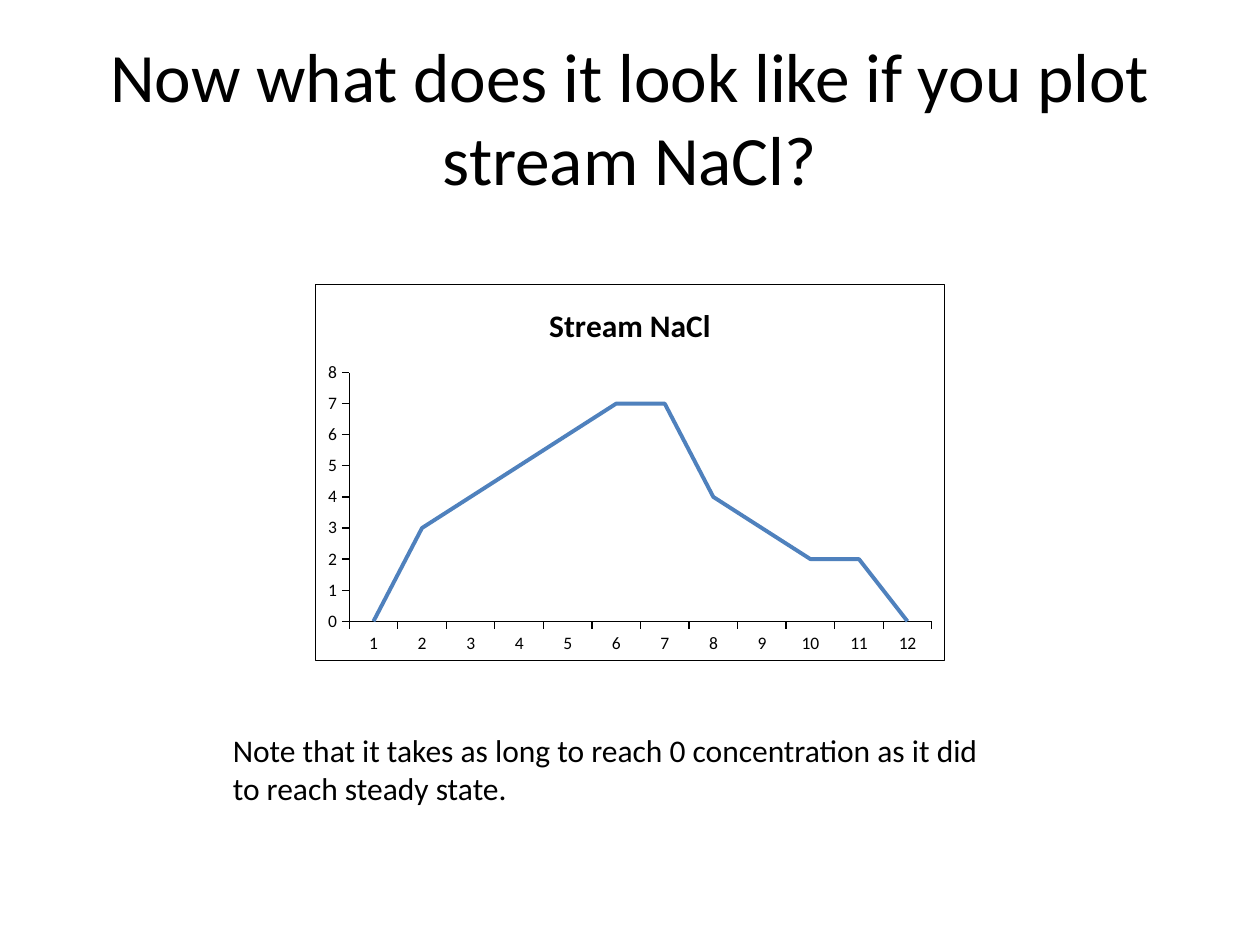
from lxml import etree
from pptx import Presentation
from pptx.chart.data import CategoryChartData
from pptx.dml.color import RGBColor
from pptx.enum.chart import XL_CHART_TYPE, XL_MARKER_STYLE, XL_TICK_MARK
from pptx.enum.text import MSO_ANCHOR, PP_ALIGN
from pptx.oxml.ns import qn
from pptx.util import Inches, Pt

LINE = XL_CHART_TYPE.LINE
BARE = XL_MARKER_STYLE.NONE
OUT, NONE = XL_TICK_MARK.OUTSIDE, XL_TICK_MARK.NONE
MIDDLE = MSO_ANCHOR.MIDDLE
CENTER, LEFT = PP_ALIGN.CENTER, PP_ALIGN.LEFT

FACE = "Calibri"
BLACK, BLUE = "000000", "4F81BD"
LEVELS = (0, 3, 4, 5, 6, 7, 7, 4, 3, 2, 2, 0)


def color(code):
    return RGBColor.from_string(code)


def set_font(font, size, bold=False):
    font.name = FACE
    font.size = Pt(size)
    font.bold = bold
    font.color.rgb = color(BLACK)


def set_line(line, code, width):
    line.color.rgb = color(code)
    line.width = Pt(width)


def fill_text(frame, text, size, align):
    frame.word_wrap = True
    para = frame.paragraphs[0]
    para.text = text
    para.alignment = align
    set_font(para.font, size)


def add_title(slide, text):
    title = slide.shapes.title
    title.left, title.top = Inches(0.5), Inches(0.3)
    title.width, title.height = Inches(9), Inches(1.25)
    title.text_frame.vertical_anchor = MIDDLE
    fill_text(title.text_frame, text, 39.6, CENTER)


def add_note(slide, text):
    box = slide.shapes.add_textbox(
        Inches(1.75), Inches(5.75), Inches(6.33), Inches(0.71))
    fill_text(box.text_frame, text, 18, LEFT)


def style_axis(axis):
    axis.has_major_gridlines = False
    axis.major_tick_mark = OUT
    axis.minor_tick_mark = NONE
    set_line(axis.format.line, BLACK, 0.75)


def add_border(chart, code, width):
    """Outline the whole chart area, which has no public format object."""
    props = etree.Element(qn("c:spPr"))
    line = etree.SubElement(props, qn("a:ln"), w=str(Pt(width)))
    fill = etree.SubElement(line, qn("a:solidFill"))
    etree.SubElement(fill, qn("a:srgbClr"), val=code)
    chart.element.find(qn("c:chart")).addnext(props)


def add_plot(slide, name, values):
    data = CategoryChartData()
    data.categories = [str(n) for n in range(1, len(values) + 1)]
    data.add_series(name, values)
    chart = slide.shapes.add_chart(
        LINE, Inches(2.5), Inches(2.25), Inches(5), Inches(3), data).chart
    set_font(chart.font, 10)
    chart.has_legend = False
    chart.has_title = True
    head = chart.chart_title.text_frame.paragraphs[0]
    head.text = name
    set_font(head.font, 18, bold=True)

    style_axis(chart.category_axis)
    style_axis(chart.value_axis)
    scale = chart.value_axis
    scale.minimum_scale, scale.maximum_scale, scale.major_unit = 0, 8, 1

    chart.plots[0].vary_by_categories = False
    series = chart.plots[0].series[0]
    series.smooth = False
    series.marker.style = BARE
    set_line(series.format.line, BLUE, 2.25)
    add_border(chart, BLACK, 0.75)


def main():
    deck = Presentation()
    deck.slide_width, deck.slide_height = Inches(10), Inches(7.5)
    slide = deck.slides.add_slide(deck.slide_layouts[5])
    add_plot(slide, "Stream NaCl", LEVELS)
    add_title(slide, "Now what does it look like if you plot stream NaCl?")
    add_note(slide, "Note that it takes as long to reach 0 concentration "
                    "as it did to reach steady state.")
    deck.save("out.pptx")


if __name__ == "__main__":
    main()
